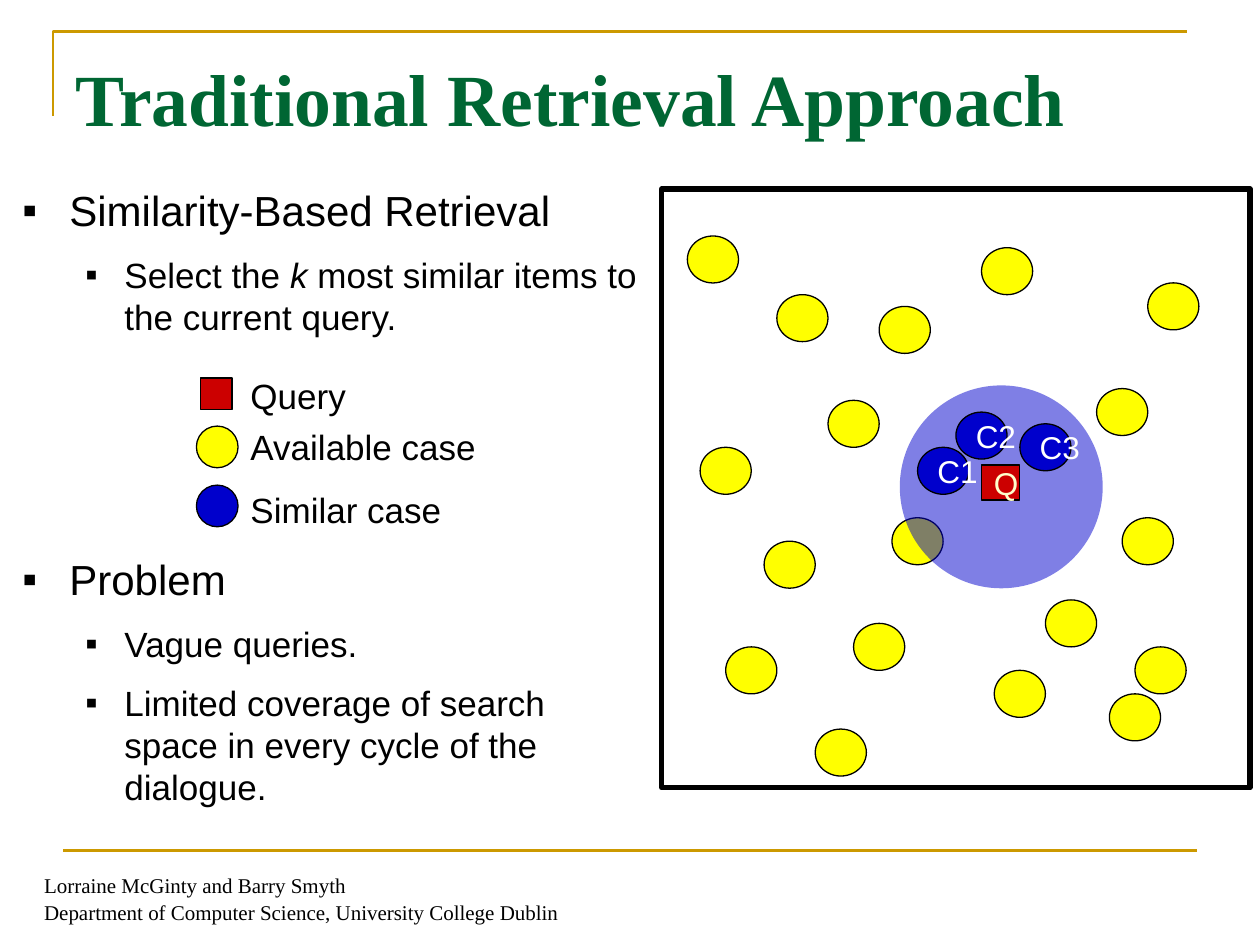
import dataclasses

import lxml.etree
import pptx
import pptx.dml.color
import pptx.enum.shapes
import pptx.enum.text
import pptx.oxml.ns
import pptx.util

Cm, Pt = pptx.util.Cm, pptx.util.Pt
RGB = pptx.dml.color.RGBColor.from_string
Kind = pptx.enum.shapes.MSO_SHAPE
Anchor = pptx.enum.text.MSO_ANCHOR
qn = pptx.oxml.ns.qn


@dataclasses.dataclass(frozen=True)
class Theme:
    sans: str = "Arial"
    serif: str = "Times New Roman"
    ink: str = "000000"
    gold: str = "CC9900"
    green: str = "006633"
    red: str = "CC0000"
    blue: str = "0000CC"
    yellow: str = "FFFF00"
    white: str = "FFFFFF"
    cream: str = "FFFFCC"
    title: int = 42
    head: int = 24
    item: int = 20
    label: int = 18
    foot: int = 12


T = Theme()

# Column and row of each case on the grid of the search space
CASES = [(9, 9), (17, 10), (13, 18), (25, 5), (34, 17), (30, 35), (8, 30),
         (15, 37), (36, 28), (3, 22), (5, 39), (26, 41), (35, 43),
         (12, 46), (38, 8), (2, 4), (37, 39)]
NEAR = [("C2", 23, 19), ("C1", 20, 22), ("C3", 28, 20)]


def style(para, size, color=T.ink, face=T.sans, bold=None):
    for run in para.runs:
        font = run.font
        font.name, font.size, font.bold = face, Pt(size), bold
        font.color.rgb = RGB(color)


def mark(shapes, kind, x, y, w, h, fill, edge=0.75):
    """Add a preset shape; fill None leaves it hollow, edge 0 drops the outline."""
    shape = shapes.add_shape(kind, Cm(x), Cm(y), Cm(w), Cm(h))
    shape.shadow.inherit = False
    if fill:
        shape.fill.solid()
        shape.fill.fore_color.rgb = RGB(fill)
    else:
        shape.fill.background()
    if edge:
        shape.line.color.rgb = RGB(T.ink)
        shape.line.width = Pt(edge)
    else:
        shape.line.fill.background()
    return shape


def tag(shape, text, color):
    frame = shape.text_frame
    frame.text = text
    frame.word_wrap = False
    frame.vertical_anchor = Anchor.MIDDLE
    frame.paragraphs[0].alignment = pptx.enum.text.PP_ALIGN.LEFT
    style(frame.paragraphs[0], T.label, color)


def box(shapes, x, y, w, h):
    frame = shapes.add_textbox(Cm(x), Cm(y), Cm(w), Cm(h)).text_frame
    frame.word_wrap = True
    return frame


def rules(shapes, x, y, w):
    """Draw the gold corner above the title and the line above the footer."""
    pen = shapes.build_freeform(Cm(x), Cm(y + 1.7))
    pen.add_line_segments([(Cm(x), Cm(y)), (Cm(x + w), Cm(y))], close=False)
    corner = pen.convert_to_shape()
    corner.fill.background()
    corner.shadow.inherit = False
    low = shapes.add_connector(pptx.enum.shapes.MSO_CONNECTOR.STRAIGHT,
                               Cm(x + 0.2), Cm(17.15), Cm(x + 0.2 + w), Cm(17.15))
    lxml.etree.SubElement(low._element.spPr, qn("a:effectLst"))
    for shape in (corner, low):
        shape.line.color.rgb = RGB(T.gold)
        shape.line.width = Pt(1.5)


def title(shape, x, y, w, h):
    shape.left, shape.top, shape.width, shape.height = map(Cm, (x, y, w, h))
    frame = shape.text_frame
    frame.text = "Traditional Retrieval Approach"
    frame.word_wrap = True
    frame.auto_size = pptx.enum.text.MSO_AUTO_SIZE.NONE
    frame.vertical_anchor = Anchor.TOP
    frame.margin_top = Cm(0.3)
    para = frame.paragraphs[0]
    para.alignment = pptx.enum.text.PP_ALIGN.LEFT
    style(para, T.title, T.green, T.serif, True)


def bullet(para, left, hang):
    props = para._p.get_or_add_pPr()
    props.set("marL", str(Cm(left)))
    props.set("indent", str(-Cm(hang)))
    lxml.etree.SubElement(props, qn("a:buFont"), typeface=T.sans)
    lxml.etree.SubElement(props, qn("a:buChar"), char="▪")


def topic(shapes, x, y, w, h, head, items):
    """Add a heading with its sub-items; text between asterisks is italic."""
    frame = box(shapes, x, y, w, h)
    first = frame.paragraphs[0]
    first.text = head
    first.space_after = Pt(6)
    bullet(first, 0.95, 0.95)
    style(first, T.head)
    for item in items:
        para = frame.add_paragraph()
        para.level = 1
        para.space_before, para.space_after = Pt(4.5), Pt(5)
        bullet(para, 2.06, 0.79)
        for i, part in enumerate(item.split("*")):
            run = para.add_run()
            run.text = part
            run.font.italic = i % 2 == 1
        style(para, T.item)


def legend(shapes, x, y):
    rows = [("Query", Kind.RECTANGLE, T.red, 0.08, 0.2, 0.64, 0),
            ("Available case", Kind.OVAL, T.yellow, 0, 1.17, 0.84, 1.04),
            ("Similar case", Kind.OVAL, T.blue, 0, 2.36, 0.84, 2.31)]
    for text, kind, fill, dx, dy, side, drop in rows:
        mark(shapes, kind, x + dx, y + dy, side, side, fill)
        frame = box(shapes, x + 0.84, y + drop, 5.6, 1.09)
        frame.text = text
        frame.word_wrap = False
        style(frame.paragraphs[0], T.item)


def space(shapes, x, y, w, h):
    """Draw the search space: cases, the query and its neighbourhood."""
    dx, dy = w / 46, h / 51

    def cell(kind, col, row, size, fill):
        return mark(shapes, kind, x + col * dx, y + row * dy,
                    size * dx, size * dy, fill)

    cell(Kind.OVAL, 18, 28, 4, T.yellow)
    halo = mark(shapes, Kind.OVAL, x + 4.8, y + 3.96, 4.09, 4.09, T.blue, 0)
    tint = halo._element.spPr.find(".//" + qn("a:srgbClr"))
    lxml.etree.SubElement(tint, qn("a:alpha"), val="50000")
    for col, row in CASES:
        cell(Kind.OVAL, col, row, 4, T.yellow)
    for name, col, row in NEAR:
        tag(cell(Kind.OVAL, col, row, 4, T.blue), name, T.white)
    tag(cell(Kind.RECTANGLE, 25, 23.5, 3, T.red), "Q", T.cream)
    mark(shapes, Kind.RECTANGLE, x, y, w, h, None, 3)


def footer(shapes, x, y, w, h):
    frame = box(shapes, x, y, w, h)
    frame.text = ("Lorraine McGinty and Barry Smyth\n"
                  "Department of Computer Science, University College Dublin")
    frame.vertical_anchor = Anchor.BOTTOM
    frame.paragraphs[1].space_before = Pt(1)
    for para in frame.paragraphs:
        style(para, T.foot, face=T.serif)


def main():
    deck = pptx.Presentation()
    deck.slide_width, deck.slide_height = Cm(25.4), Cm(19.05)
    slide = deck.slides.add_slide(deck.slide_layouts[5])
    shapes = slide.shapes
    rules(shapes, 1.07, 0.63, 22.86)
    title(shapes.title, 1.27, 0.76, 22.86, 3.18)
    topic(shapes, 0.2, 3.6, 13.13, 3.6, "Similarity-Based Retrieval",
          ["Select the *k* most similar items to the current query."])
    topic(shapes, 0.2, 11.04, 13.13, 5.6, "Problem",
          ["Vague queries.",
           "Limited coverage of search space in every cycle of the dialogue."])
    space(shapes.add_group_shape().shapes, 13.34, 3.81, 11.86, 12.07)
    legend(shapes.add_group_shape().shapes, 3.96, 7.42)
    footer(shapes, 0.64, 17.5, 17.78, 1.27)
    deck.save("out.pptx")


if __name__ == "__main__":
    main()
